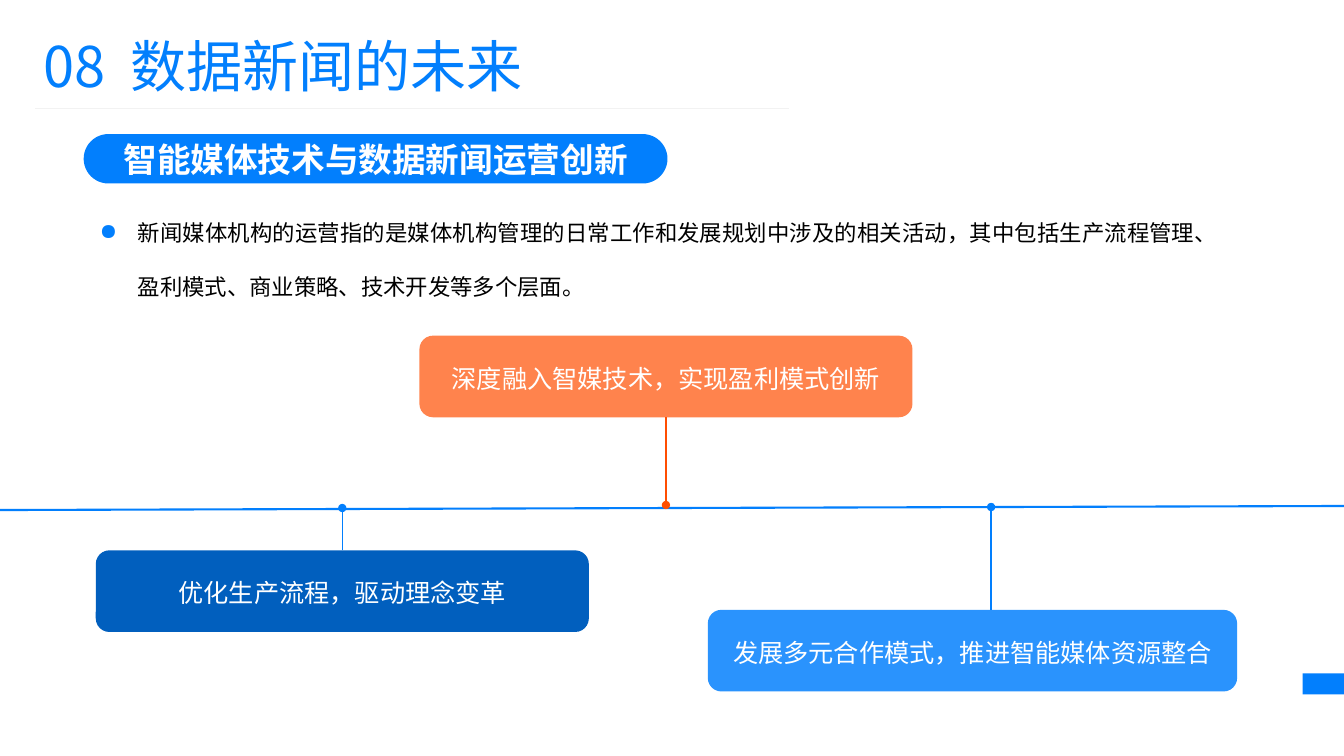
from dataclasses import dataclass

from lxml import etree
from pptx import Presentation
from pptx.dml.color import RGBColor
from pptx.enum.shapes import MSO_CONNECTOR, MSO_SHAPE
from pptx.enum.text import MSO_ANCHOR, PP_ALIGN
from pptx.oxml.ns import qn
from pptx.util import Inches, Pt

STRAIGHT = MSO_CONNECTOR.STRAIGHT
RECTANGLE, ROUNDED = MSO_SHAPE.RECTANGLE, MSO_SHAPE.ROUNDED_RECTANGLE
MIDDLE = MSO_ANCHOR.MIDDLE
CENTER, JUSTIFY = PP_ALIGN.CENTER, PP_ALIGN.JUSTIFY
FONT = "Noto Sans CJK SC"
BLUE, ORANGE, WHITE = "027FFD", "FF4E01", "FFFFFF"
TOP, BOTTOM = 0, 2


@dataclass
class Milestone:
    text: str
    left: float
    top: float
    width: float
    fill: str
    stem_x: float
    stem_end: float
    stem_color: str
    site: int
    joined: bool = True
    height: float = 0.81


MILESTONES = [
    Milestone("深度融入智媒技术，实现盈利模式创新", 4.16, 3.33, 4.89, "FF834D",
              6.61, 5.01, ORANGE, BOTTOM),
    Milestone("发展多元合作模式，推进智能媒体资源整合", 7.02, 6.05, 5.25, "2A93FD",
              9.83, 5.03, BLUE, TOP, joined=False),
    Milestone("优化生产流程，驱动理念变革", 0.95, 5.46, 4.89, "015FBE",
              3.4, 5.04, BLUE, TOP),
]


def rgb(value: str) -> RGBColor:
    return RGBColor.from_string(value)


def format_runs(para, size: float, color: str, bold: bool = False) -> None:
    for span in para.runs:
        span.font.size = Pt(size)
        span.font.bold = bold
        span.font.color.rgb = rgb(color)
        span.font.name = FONT
        etree.SubElement(span.font._element, qn("a:ea"), typeface=FONT)


def add_box(page, kind, left: float, top: float, width: float, height: float, fill: str):
    box = page.shapes.add_shape(kind, Inches(left), Inches(top), Inches(width), Inches(height))
    box.shadow.inherit = False
    box.fill.solid()
    box.fill.fore_color.rgb = rgb(fill)
    box.line.fill.background()
    return box


def add_label(box, text: str, size: float, bold: bool = False) -> None:
    frame = box.text_frame
    frame.text = text
    frame.word_wrap = True
    frame.vertical_anchor = MIDDLE
    frame.paragraphs[0].alignment = CENTER
    format_runs(frame.paragraphs[0], size, WHITE, bold)


def add_text_box(page, left: float, top: float, width: float, height: float):
    box = page.shapes.add_textbox(Inches(left), Inches(top), Inches(width), Inches(height))
    box.text_frame.word_wrap = True
    return box.text_frame


def add_line(page, x1: float, y1: float, x2: float, y2: float,
             color: str, width: float, dot: bool = False):
    line = page.shapes.add_connector(STRAIGHT, Inches(x1), Inches(y1), Inches(x2), Inches(y2))
    line.line.color.rgb = rgb(color)
    line.line.width = Pt(width)
    if dot:
        etree.SubElement(line.line._get_or_add_ln(), qn("a:tailEnd"), type="oval")
    etree.SubElement(line._element.spPr, qn("a:effectLst"))
    return line


def add_title(page) -> None:
    para = add_text_box(page, 0.33, 0.26, 7.68, 0.77).paragraphs[0]
    for part in ("08", " ", "数据新闻的未来"):
        para.add_run().text = part
    format_runs(para, 40, BLUE)
    # Widen the gap after the chapter number
    para.runs[1].font._element.set("spc", "900")
    add_line(page, 0.35, 1.08, 7.83, 1.08, "F2F2F2", 0.5)


def add_milestone(page, item: Milestone) -> None:
    box = add_box(page, ROUNDED, item.left, item.top, item.width, item.height, item.fill)
    box.text_frame.margin_top = Inches(0.08)
    add_label(box, item.text, 18)
    edge = item.top if item.site == TOP else item.top + item.height
    stem = add_line(page, item.stem_x, edge, item.stem_x, item.stem_end,
                    item.stem_color, 1, dot=True)
    if item.joined:
        stem.begin_connect(box, item.site)
        stem.end_x = stem.begin_x


def add_summary(page) -> None:
    frame = add_text_box(page, 0.89, 1.4, 11.07, 2.09)
    frame.vertical_anchor = MIDDLE
    frame.text = ("新闻媒体机构的运营指的是媒体机构管理的日常工作和发展规划中涉及的相关活动，"
                  "其中包括生产流程管理、盈利模式、商业策略、技术开发等多个层面。")
    para = frame.paragraphs[0]
    para.alignment = JUSTIFY
    para.line_spacing = 2.0
    properties = para._p.get_or_add_pPr()
    properties.set("marL", str(Inches(0.38)))
    properties.set("indent", str(-Inches(0.38)))
    bullet_color = etree.SubElement(properties, qn("a:buClr"))
    etree.SubElement(bullet_color, qn("a:srgbClr"), val=BLUE)
    etree.SubElement(properties, qn("a:buChar"), char="●")
    format_runs(para, 16, "000000")


def main() -> None:
    deck = Presentation()
    deck.slide_width, deck.slide_height = Inches(13.33), Inches(7.5)
    page = deck.slides.add_slide(deck.slide_layouts[6])

    # Corner mark and title
    add_box(page, RECTANGLE, 12.92, 6.68, 0.41, 0.21, BLUE)
    add_title(page)

    # Timeline with its milestones
    add_line(page, 0, 5.06, 13.33, 5.02, BLUE, 1.5)
    for item in MILESTONES:
        add_milestone(page, item)

    # Summary and section heading
    add_summary(page)
    heading = add_box(page, ROUNDED, 0.83, 1.33, 5.79, 0.49, BLUE)
    heading.adjustments[0] = 0.5
    add_label(heading, "智能媒体技术与数据新闻运营创新", 24, bold=True)

    deck.save("out.pptx")


if __name__ == "__main__":
    main()
